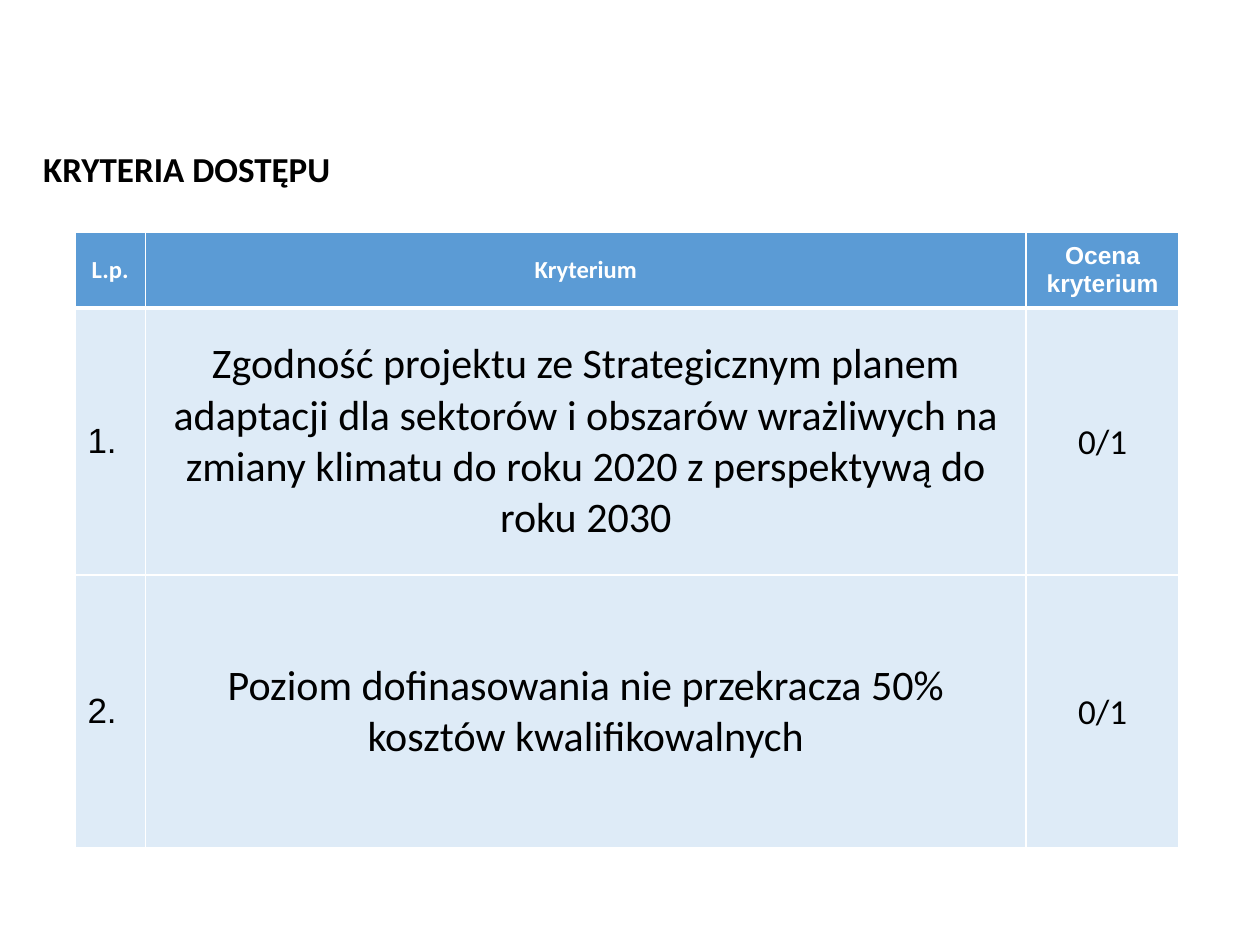
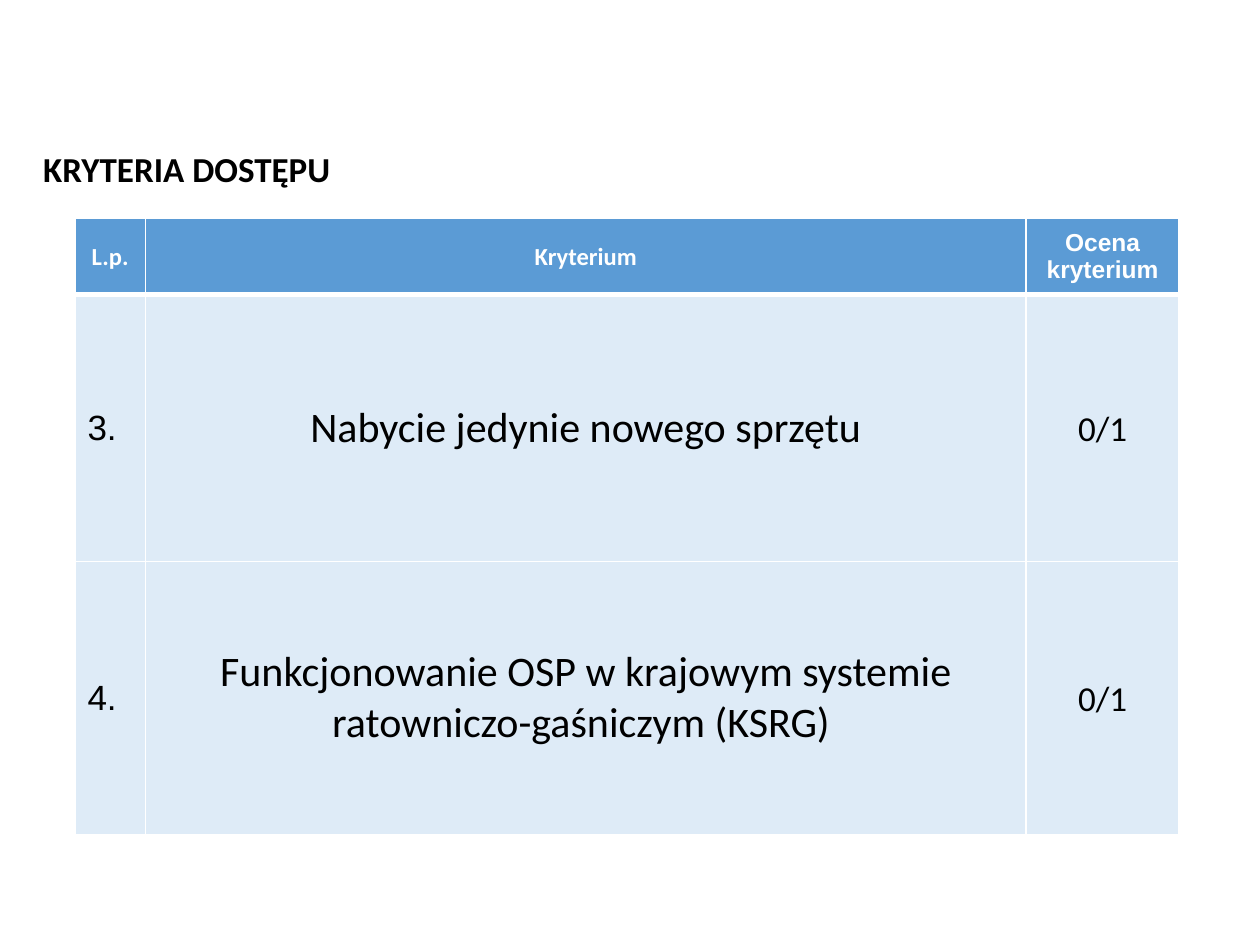
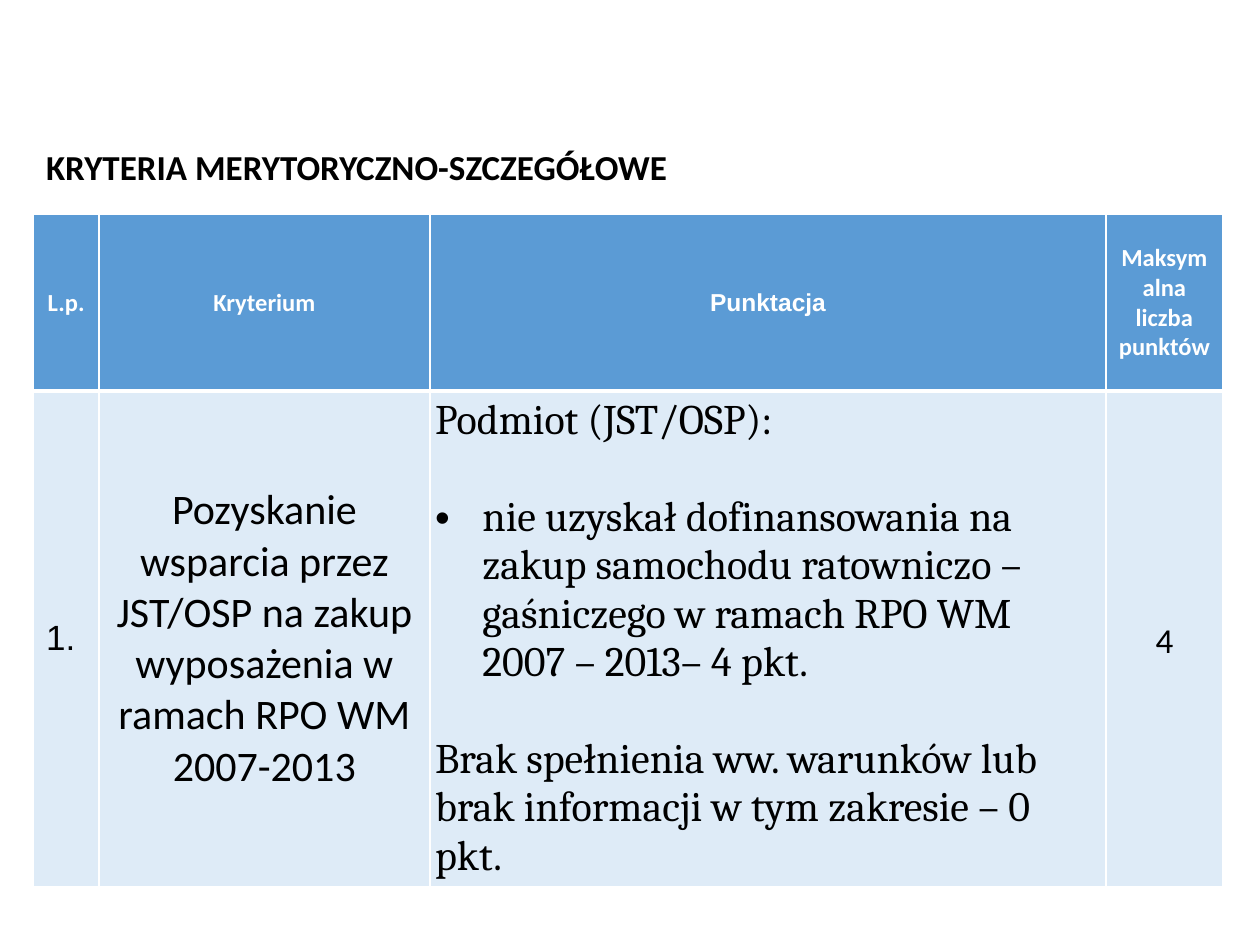
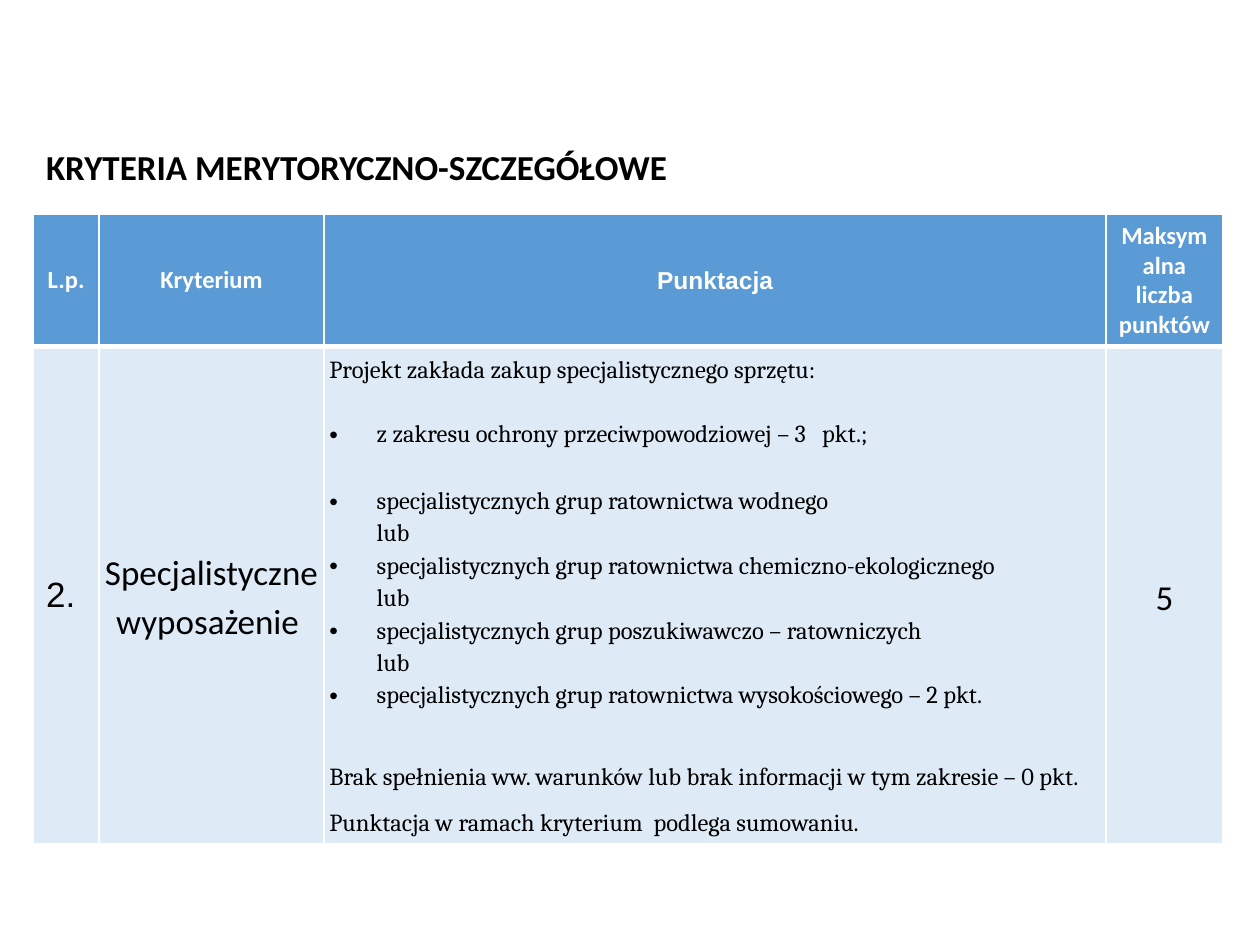
from dataclasses import dataclass, replace

from lxml.etree import SubElement
from pptx import Presentation
from pptx.dml.color import RGBColor
from pptx.enum.text import MSO_ANCHOR, PP_ALIGN
from pptx.oxml.ns import qn
from pptx.util import Pt


@dataclass(frozen=True)
class Theme:
    header_fill: str = "5B9BD5"
    body_fill: str = "DEEBF7"
    border: str = "FFFFFF"
    header_text: str = "FFFFFF"
    text: str = "000000"
    sans: str = "Calibri"
    number_font: str = "Arial"
    serif: str = "Cambria"
    small: int = 14
    medium: int = 20
    large: int = 24
    thin: int = 1
    thick: int = 3
    hanging: int = 27


THEME = Theme()


@dataclass(frozen=True)
class TextStyle:
    font: str = THEME.sans
    size: int = THEME.large
    color: str = THEME.text
    bold: bool = False
    align: PP_ALIGN = PP_ALIGN.CENTER
    spacing: float = 1.0
    tight: bool = False


@dataclass(frozen=True)
class Line:
    text: str
    kind: str = "plain"  # plain, bullet or indented
    before: float = 0


TITLE = TextStyle(size=THEME.medium, bold=True, align=PP_ALIGN.LEFT)
HEADER = TextStyle(size=THEME.small, color=THEME.header_text, bold=True)
HEADER_ARIAL = replace(HEADER, font=THEME.number_font)
NUMBER = TextStyle(font=THEME.number_font, size=THEME.medium, align=PP_ALIGN.LEFT)
CRITERION = TextStyle()
CRITERION_SMALL = TextStyle(size=THEME.medium, spacing=1.15, tight=True)
RATING = TextStyle(size=THEME.medium, spacing=1.07, tight=True)
MAX_POINTS = replace(RATING, spacing=1.15)
SCORING = TextStyle(font=THEME.serif, align=PP_ALIGN.LEFT, tight=True)
SCORING_SMALL = replace(SCORING, size=THEME.small, align=PP_ALIGN.JUSTIFY, spacing=1.15)

ACCESS_HEADERS = [("L.p.", HEADER), ("Kryterium", HEADER), ("Ocena kryterium", HEADER_ARIAL)]
DETAIL_HEADERS = [("L.p.", HEADER), ("Kryterium", HEADER), ("Punktacja", HEADER_ARIAL),
                  ("Maksymalna liczba punktów", HEADER)]

SUPPORT_SCORING = [
    Line("Podmiot (JST/OSP):"),
    Line("nie uzyskał dofinansowania na zakup samochodu ratowniczo – gaśniczego "
         "w ramach RPO WM 2007 – 2013– 4 pkt.", "bullet", 27.8),
    Line("Brak spełnienia ww. warunków lub brak informacji w tym zakresie – 0 pkt.",
         before=27.8),
]
EQUIPMENT_SCORING = [
    Line("Projekt zakłada zakup specjalistycznego sprzętu:"),
    Line("z zakresu ochrony przeciwpowodziowej – 3   pkt.;", "bullet", 18.6),
    Line("specjalistycznych grup ratownictwa wodnego", "bullet", 19.5),
    Line("lub", "indented"),
    Line("specjalistycznych grup ratownictwa chemiczno-ekologicznego", "bullet"),
    Line("lub", "indented"),
    Line("specjalistycznych grup poszukiwawczo – ratowniczych", "bullet"),
    Line("lub", "indented"),
    Line("specjalistycznych grup ratownictwa wysokościowego – 2 pkt.", "bullet"),
    Line("Brak spełnienia ww. warunków lub brak informacji w tym zakresie – 0 pkt.",
         before=28.4),
    Line("Punktacja w ramach kryterium  podlega sumowaniu.", before=7.8),
]


def indent(paragraph, bulleted):
    properties = paragraph._p.get_or_add_pPr()
    properties.set("marL", str(Pt(THEME.hanging)))
    properties.set("indent", str(-Pt(THEME.hanging) if bulleted else 0))
    if bulleted:
        SubElement(properties, qn("a:buFont"), typeface=THEME.number_font)
        SubElement(properties, qn("a:buChar"), char="•")


def write_line(paragraph, line, style):
    paragraph.text = line.text
    if line.kind != "plain":
        indent(paragraph, line.kind == "bullet")
    paragraph.alignment = style.align
    paragraph.line_spacing = style.spacing
    paragraph.space_before = Pt(line.before)
    for span in paragraph.runs:
        span.font.name = style.font
        span.font.size = Pt(style.size)
        span.font.bold = style.bold
        span.font.color.rgb = RGBColor.from_string(style.color)


def write_lines(frame, content, style):
    """Accept one string or a list of Line objects."""
    lines = [Line(content)] if isinstance(content, str) else content
    for index, line in enumerate(lines):
        paragraph = frame.add_paragraph() if index else frame.paragraphs[0]
        write_line(paragraph, line, style)


def set_borders(cell, top, bottom):
    properties = cell._tc.get_or_add_tcPr()
    widths = {"a:lnL": THEME.thin, "a:lnR": THEME.thin, "a:lnT": top, "a:lnB": bottom}
    for tag, width in widths.items():
        border = SubElement(properties, qn(tag), w=str(Pt(width)))
        fill = SubElement(border, qn("a:solidFill"))
        SubElement(fill, qn("a:srgbClr"), val=THEME.border)


def fill_cell(cell, content, style, row):
    set_borders(cell,
                top=THEME.thick if row == 1 else THEME.thin,
                bottom=THEME.thick if row == 0 else THEME.thin)
    cell.fill.solid()
    fill = THEME.body_fill if row else THEME.header_fill
    cell.fill.fore_color.rgb = RGBColor.from_string(fill)
    cell.vertical_anchor = MSO_ANCHOR.MIDDLE
    if style.tight:
        cell.margin_left = cell.margin_right = Pt(3)
        cell.margin_top = cell.margin_bottom = Pt(3)
    write_lines(cell.text_frame, content, style)


def add_criteria_table(page, left, top, widths, heights, rows):
    frame = page.shapes.add_table(len(heights), len(widths), Pt(left), Pt(top),
                                  Pt(sum(widths)), Pt(sum(heights)))
    table = frame.table
    table.horz_banding = False
    for column, width in zip(table.columns, widths):
        column.width = Pt(width)
    for table_row, height in zip(table.rows, heights):
        table_row.height = Pt(height)
    for row, cells in enumerate(rows):
        for column, (content, style) in enumerate(cells):
            fill_cell(table.cell(row, column), content, style, row)


def add_page(deck, title, left, top, width):
    page = deck.slides.add_slide(deck.slide_layouts[5])
    box = page.shapes.title
    box.left, box.top, box.width, box.height = Pt(left), Pt(top), Pt(width), Pt(31.5)
    box.text_frame.vertical_anchor = MSO_ANCHOR.MIDDLE
    write_lines(box.text_frame, title, TITLE)
    return page


def add_access_page(deck, table_top, criteria):
    page = add_page(deck, "KRYTERIA DOSTĘPU", 17.5, 80.6, 266.4)
    rows = [ACCESS_HEADERS]
    for number, criterion in criteria:
        rows.append([(number, NUMBER), (criterion, CRITERION), ("0/1", RATING)])
    add_criteria_table(page, 42.8, table_top, [40.3, 503.3, 87.4], [43.5, 152.4, 156.2], rows)


def add_detail_page(deck, criterion_width, heights, row):
    page = add_page(deck, "KRYTERIA MERYTORYCZNO-SZCZEGÓŁOWE", 19.1, 79.5, 390)
    widths = [37.4, criterion_width, 575.6 - criterion_width, 66.6]
    add_criteria_table(page, 19.1, 122.6, widths, heights, [DETAIL_HEADERS, row])


def main():
    deck = Presentation()
    deck.slide_width, deck.slide_height = Pt(720), Pt(540)
    add_access_page(deck, 132.6, [
        ("1.", "Zgodność projektu ze Strategicznym planem adaptacji dla sektorów i obszarów "
               "wrażliwych na zmiany klimatu do roku 2020 z perspektywą do roku 2030"),
        ("2.", "Poziom dofinasowania nie przekracza 50% kosztów kwalifikowalnych"),
    ])
    add_access_page(deck, 124.9, [
        ("3.", "Nabycie jedynie nowego sprzętu"),
        ("4.", "Funkcjonowanie OSP w krajowym systemie ratowniczo-gaśniczym (KSRG) "),
    ])
    add_detail_page(deck, 189.2, [100.8, 283.2], [
        ("1.", NUMBER),
        ("Pozyskanie wsparcia przez JST/OSP na zakup wyposażenia w ramach RPO WM 2007-2013",
         CRITERION),
        (SUPPORT_SCORING, SCORING),
        ("4", MAX_POINTS),
    ])
    add_detail_page(deck, 128.8, [75, 283.2], [
        ("2.", NUMBER),
        ("Specjalistyczne wyposażenie ", CRITERION_SMALL),
        (EQUIPMENT_SCORING, SCORING_SMALL),
        ("5", MAX_POINTS),
    ])
    deck.save("out.pptx")


if __name__ == "__main__":
    main()
